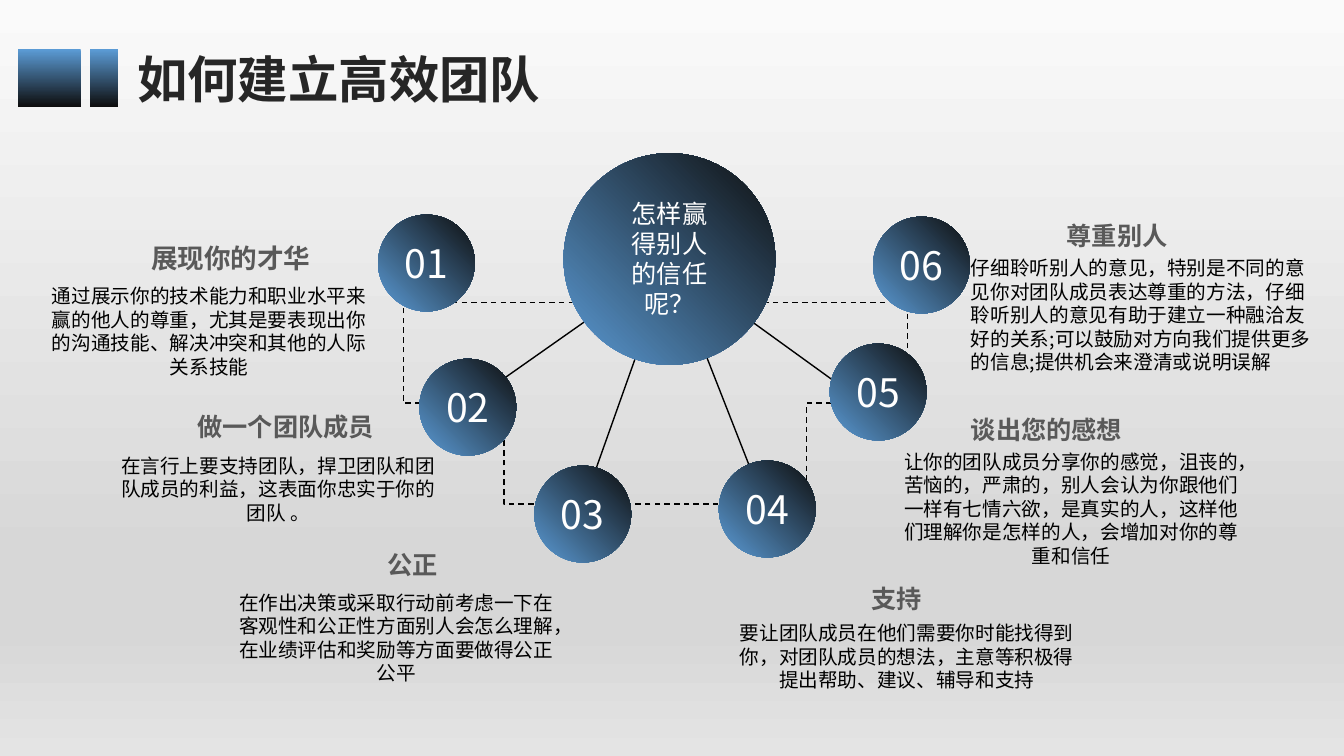
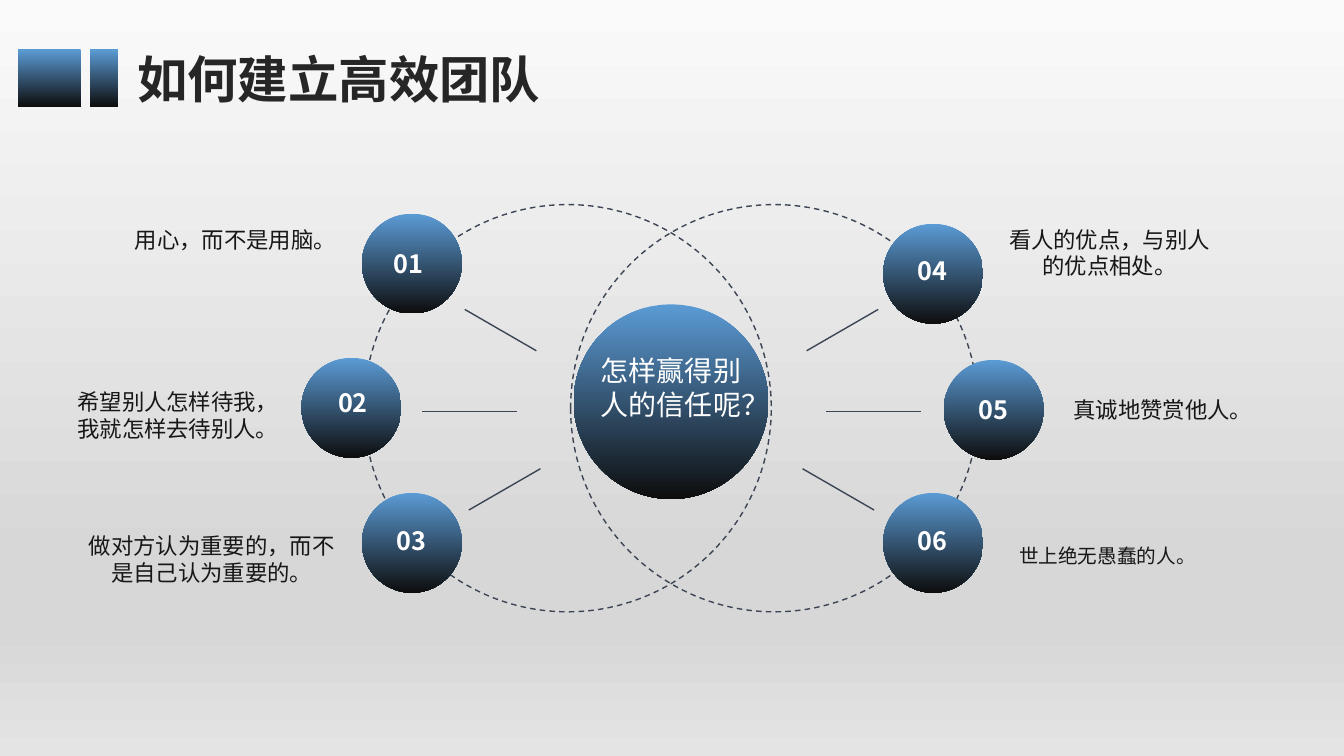
from copy import deepcopy
from dataclasses import dataclass

from lxml import etree
from pptx import Presentation
from pptx.dml.color import RGBColor
from pptx.enum.dml import MSO_LINE
from pptx.enum.shapes import MSO_CONNECTOR, MSO_SHAPE
from pptx.enum.text import MSO_ANCHOR, MSO_AUTO_SIZE, PP_ALIGN
from pptx.oxml.ns import qn
from pptx.util import Inches, Pt


@dataclass(frozen=True)
class Theme:
    font: str = "Noto Sans CJK SC"
    blue: str = "5B9BD5"
    dark: str = "0D0D0D"
    title: str = "262626"
    heading: str = "595959"
    body: str = "000000"
    quote: str = "181717"
    white: str = "FFFFFF"
    slate: str = "3C4554"
    backdrop: tuple = ((0, "FAFAFA"), (0.74, "D7D7D7"), (0.83, "D7D7D7"), (1, "E4E4E4"))
    down: int = 270
    up_right: int = 45
    title_size: int = 36
    number_size: int = 28
    center_size: int = 20
    heading_size: int = 18
    quote_size: int = 16
    body_size: int = 14


T = Theme()
LEFT, CENTER, RIGHT = PP_ALIGN.LEFT, PP_ALIGN.CENTER, PP_ALIGN.RIGHT
rgb = RGBColor.from_string


def set_text(sp, text, size, color, bold=False, align=CENTER,
             anchor=MSO_ANCHOR.TOP, margins=(0.1, 0.05), spacing=None):
    tf = sp.text_frame
    tf.text = text
    tf.word_wrap = True
    tf.auto_size = MSO_AUTO_SIZE.NONE
    tf.vertical_anchor = anchor
    tf.margin_left = tf.margin_right = Inches(margins[0])
    tf.margin_top = tf.margin_bottom = Inches(margins[1])
    p = tf.paragraphs[0]
    p.alignment, p.line_spacing = align, spacing
    font = p.runs[0].font
    font.name, font.size, font.bold = T.font, Pt(size), bold
    font.color.rgb = rgb(color)
    # East Asian glyphs need their own typeface entry
    for latin in list(sp.element.iter(qn("a:latin"))):
        ea = etree.Element(qn("a:ea"), typeface=T.font)
        latin.addnext(ea)


def add_gradient(s, kind, box, angle):
    sp = s.shapes.add_shape(kind, *map(Inches, box))
    sp.shadow.inherit = False
    sp.line.fill.background()
    sp.fill.gradient()
    sp.fill.gradient_angle = angle
    for stop, color in zip(sp.fill.gradient_stops, (T.blue, T.dark)):
        stop.color.rgb = rgb(color)
    return sp


prs = Presentation()
prs.slide_width, prs.slide_height = Inches(13.33), Inches(7.5)

# Shared background on the master
master = prs.slide_master
fill = master.background.fill
fill.gradient()
fill.gradient_angle = T.down
stops = next(master.element.iter(qn("a:gsLst")))
for _ in range(len(T.backdrop) - len(stops)):
    stops.append(deepcopy(stops[-1]))
for stop, (position, color) in zip(fill.gradient_stops, T.backdrop):
    stop.position = position
    stop.color.rgb = rgb(color)

# Shared header: two blocks and the title
slides = [prs.slides.add_slide(prs.slide_layouts[5]) for _ in range(2)]
for s in slides:
    for left, width in ((0.18, 0.62), (0.89, 0.28)):
        add_gradient(s, MSO_SHAPE.RECTANGLE, (left, 0.49, width, 0.57), T.down)
    title = s.shapes.title
    title.left, title.top = Inches(1.26), Inches(0.43)
    title.width, title.height = Inches(7.89), Inches(0.71)
    set_text(title, "如何建立高效团队", T.title_size, T.title, True, LEFT)
trust, advice = slides

# Slide 1: dashed orbit, a closed outline of cubic curves
start = (4.21, 2.61)
curves = [((4.58, 2.63), (8.77, 2.56), (9.2, 2.67)),
          ((9.28, 3), (8.33, 5.16), (6.65, 5.23)),
          ((4.98, 5.3), (3.83, 2.6), start)]
points, steps = [start], 24
for c1, c2, end in curves:
    begin = points[-1]
    for i in range(1, steps + 1):
        t = i / steps
        u = 1 - t
        points.append(tuple(
            u**3 * a + 3 * u * u * t * b + 3 * u * t * t * c + t**3 * d
            for a, b, c, d in zip(begin, c1, c2, end)))
builder = trust.shapes.build_freeform(*start, scale=Inches(1))
builder.add_line_segments(points[1:], close=True)
orbits = [(builder.convert_to_shape(), T.body)]

# Slide 2: two dashed rings
for left in (3.61, 5.66):
    box = (left, 2.03, 4.04, 4.04)
    orbits.append((advice.shapes.add_shape(MSO_SHAPE.OVAL, *map(Inches, box)), T.slate))

for sp, color in orbits:
    sp.shadow.inherit = False
    sp.fill.background()
    sp.line.color.rgb = rgb(color)
    sp.line.width = Pt(1)
    sp.line.dash_style = MSO_LINE.DASH

# Spokes: to the hub on slide 1, mirrored left and right on slide 2
hub, mirror = (6.64, 2.6), 13.32
spokes = [(trust, T.body, x, y, *hub)
          for x, y in ((4.45, 4.14), (5.72, 5.19), (7.62, 5.1), (8.77, 4.14))]
for x1, y1, x2, y2 in ((4.61, 3.07, 5.32, 3.48), (4.19, 4.08, 5.13, 4.08),
                       (4.65, 5.06, 5.36, 4.65)):
    spokes.append((advice, T.slate, x1, y1, x2, y2))
    spokes.append((advice, T.slate, mirror - x1, y1, mirror - x2, y2))
for s, color, *ends in spokes:
    line = s.shapes.add_connector(MSO_CONNECTOR.STRAIGHT, *map(Inches, ends))
    line.line.color.rgb = rgb(color)
    line.line.width = Pt(1)
    etree.SubElement(line.element.spPr, qn("a:effectLst"))

# Slide 1: numbered circle, heading and body for each point
# circle place, heading, its place, size and alignment, body box and alignment, body
trust_points = [
    ((3.75, 2.13), "展现你的才华", (0.89, 2.34), T.heading_size + 1, RIGHT,
     (0.37, 2.75, 3.41, 1.08), CENTER,
     "通过展示你的技术能力和职业水平来赢的他人的尊重，尤其是要表现出你的沟通技能、"
     "解决冲突和其他的人际关系技能"),
    ((4.16, 3.56), "做一个团队成员", (1.52, 4.02), T.heading_size, RIGHT,
     (1, 4.43, 3.52, 0.84), CENTER,
     "在言行上要支持团队，捍卫团队和团队成员的利益，这表面你忠实于你的团队 。"),
    ((5.3, 4.62), "公正", (2.15, 5.39), T.heading_size, RIGHT,
     (2.24, 5.79, 3.38, 1.08), CENTER,
     "在作出决策或采取行动前考虑一下在客观性和公正性方面别人会怎么理解，"
     "在业绩评估和奖励等方面要做得公正公平"),
    ((7.13, 4.57), "支持", (7.71, 5.73), T.heading_size, CENTER,
     (7.13, 6.09, 3.73, 0.84), CENTER,
     "要让团队成员在他们需要你时能找得到你，对团队成员的想法，"
     "主意等积极得提出帮助、建议、辅导和支持"),
    ((8.23, 3.41), "谈出您的感想", (9.46, 4.05), T.heading_size, LEFT,
     (8.76, 4.39, 3.73, 1.31), CENTER,
     "让你的团队成员分享你的感觉，沮丧的，苦恼的，严肃的，别人会认为你跟他们一样有七情六欲，"
     "是真实的人，这样他们理解你是怎样的人，会增加对你的尊重和信任"),
    ((8.66, 2.15), "尊重别人", (9.9, 2.13), T.heading_size, CENTER,
     (9.5, 2.47, 3.73, 1.31), LEFT,
     "仔细聆听别人的意见，特别是不同的意见你对团队成员表达尊重的方法，"
     "仔细聆听别人的意见有助于建立一种融洽友好的关系;可以鼓励对方向我们提供更多的信息;"
     "提供机会来澄清或说明误解"),
]
for n, (place, heading, head_at, size, head_align, body_box, body_align, body) in enumerate(
        trust_points, 1):
    circle = add_gradient(trust, MSO_SHAPE.OVAL, (*place, 0.96, 0.96), T.up_right)
    set_text(circle, f"{n:02}", T.number_size, T.white, anchor=MSO_ANCHOR.MIDDLE)
    sp = trust.shapes.add_textbox(*map(Inches, (*head_at, 2.36, 0.42)))
    set_text(sp, heading, size, T.heading, True, head_align, margins=(0.17, 0), spacing=1.2)
    sp = trust.shapes.add_textbox(*map(Inches, body_box))
    set_text(sp, body, T.body_size, T.body, align=body_align, margins=(0.13, 0.07))

# Slide 2: numbered circle, number label and advice for each point
# circle place, label place, advice box, advice size, advice
advice_points = [
    ((3.59, 2.12), (3.61, 2.41), (1.2, 2.19, 2.27, 0.37), T.quote_size,
     "用心，而不是用脑。"),
    ((2.99, 3.55), (3.06, 3.79), (0.63, 3.8, 2.27, 0.64), T.quote_size,
     "希望别人怎样待我，我就怎样去待别人。"),
    ((3.59, 4.89), (3.64, 5.16), (0.73, 5.23, 2.74, 0.64), T.quote_size,
     "做对方认为重要的，而不是自己认为重要的。"),
    ((8.76, 2.22), (8.81, 2.48), (9.87, 2.19, 2.27, 0.64), T.quote_size,
     "看人的优点，与别人的优点相处。"),
    ((9.36, 3.57), (9.41, 3.86), (10.4, 3.88, 2.27, 0.37), T.quote_size,
     "真诚地赞赏他人。"),
    ((8.76, 4.89), (8.81, 5.16), (9.85, 5.35, 2.27, 0.34), T.body_size,
     "世上绝无愚蠢的人。"),
]
for n, (place, label_at, box, size, text) in enumerate(advice_points, 1):
    add_gradient(advice, MSO_SHAPE.OVAL, (*place, 0.99, 0.99), T.down)
    sp = advice.shapes.add_textbox(*map(Inches, (*label_at, 0.88, 0.4)))
    set_text(sp, f"{n:02}", T.heading_size, T.white, True)
    sp = advice.shapes.add_textbox(*map(Inches, box))
    set_text(sp, text, size, T.quote)

# Central question on both slides
for s, disc, angle, box, size, anchor in (
        (trust, (5.59, 1.52, 2.1, 2.1), T.up_right,
         (6.13, 2.05, 1.02, 1.03), T.heading_size, MSO_ANCHOR.MIDDLE),
        (advice, (5.69, 3.02, 1.93, 1.93), T.down,
         (5.79, 3.46, 1.73, 0.77), T.center_size, MSO_ANCHOR.TOP)):
    add_gradient(s, MSO_SHAPE.OVAL, disc, angle)
    sp = s.shapes.add_textbox(*map(Inches, box))
    set_text(sp, "怎样赢得别人的信任呢？", size, T.white, anchor=anchor)

prs.save("out.pptx")
